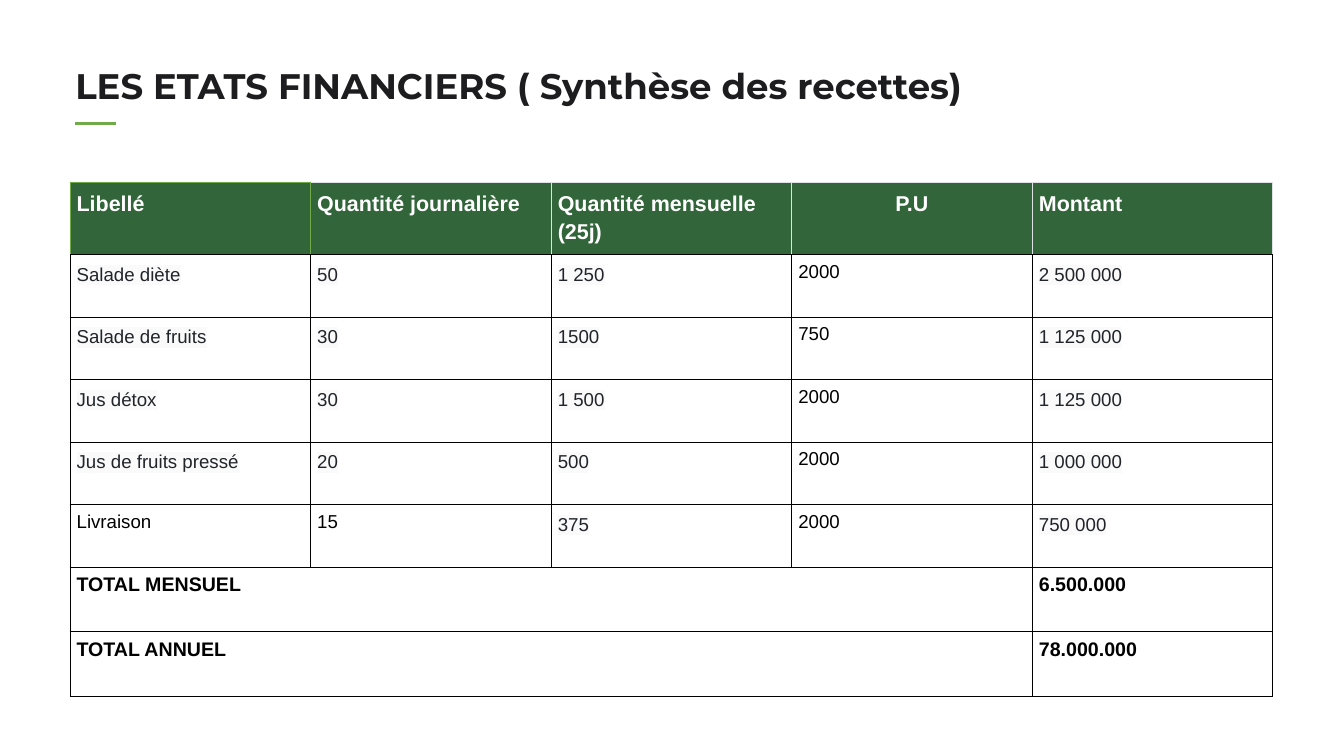
from lxml.etree import SubElement
from pptx import Presentation
from pptx.dml.color import RGBColor
from pptx.enum.shapes import MSO_CONNECTOR
from pptx.enum.text import MSO_ANCHOR, MSO_AUTO_SIZE, PP_ALIGN
from pptx.oxml.ns import qn
from pptx.util import Inches, Pt

WHITE = RGBColor(0xFF, 0xFF, 0xFF)
BLACK = RGBColor(0x00, 0x00, 0x00)
INK = RGBColor(0x1D, 0x1D, 0x1F)
GREY_TEXT = RGBColor(0x21, 0x25, 0x29)
GREEN = RGBColor(0x71, 0xAA, 0x48)
DARK_GREEN = RGBColor(0x32, 0x65, 0x3A)
PALE_GREY = RGBColor(0xDE, 0xE2, 0xE6)
OFF_WHITE = RGBColor(0xFA, 0xFA, 0xFA)

HEADERS = ["Libellé", "Quantité journalière", "Quantité mensuelle (25j)", "P.U", "Montant"]
PRODUCTS = [
    ["Salade diète", "50", "1 250", "2000", "2 500 000"],
    ["Salade de fruits", "30", "1500", "750", "1 125 000"],
    ["Jus détox", "30", "1 500", "2000", "1 125 000"],
    ["Jus de fruits pressé", "20", "500", "2000", "1 000 000"],
    ["Livraison", "15", "375", "2000", "750 000"],
]
TOTALS = [("TOTAL MENSUEL", "6.500.000"), ("TOTAL ANNUEL", "78.000.000")]
UNIT_PRICE = HEADERS.index("P.U")
LAST = len(HEADERS) - 1
ROW_HEIGHTS = [0.99] + [0.93] * len(PRODUCTS) + [0.96] * len(TOTALS)
COLUMN_WIDTH = 3.58


def add_title(slide, text):
    sp = slide.shapes.title
    sp.left, sp.top, sp.width, sp.height = map(Inches, (1.12, 0.89, 18.29, 0.64))
    tf = sp.text_frame
    tf.margin_left = tf.margin_top = tf.margin_right = tf.margin_bottom = 0
    tf.vertical_anchor = MSO_ANCHOR.TOP
    tf.auto_size = MSO_AUTO_SIZE.SHAPE_TO_FIT_TEXT
    tf.word_wrap = True
    tf.text = text
    p = tf.paragraphs[0]
    p.alignment = PP_ALIGN.LEFT
    p.line_spacing = 1.1
    p.font.name = "Montserrat"
    p.font.size = Pt(38)
    p.font.bold = True
    p.font.color.rgb = INK


def add_title_rule(slide):
    line = slide.shapes.add_connector(
        MSO_CONNECTOR.STRAIGHT, Inches(1.12), Inches(1.84), Inches(1.73), Inches(1.84))
    line.line.color.rgb = GREEN
    line.line.width = Pt(3.75)
    SubElement(line._element.spPr, qn("a:effectLst"))


def set_borders(cell, left=BLACK, right=BLACK, top=BLACK, bottom=BLACK):
    tc_pr = cell._tc.get_or_add_tcPr()
    for side, color in zip("LRTB", (left, right, top, bottom)):
        ln = SubElement(tc_pr, qn(f"a:ln{side}"), w=str(Pt(0.75)))
        fill = SubElement(ln, qn("a:solidFill"))
        SubElement(fill, qn("a:srgbClr"), val=str(color))


def highlight(run, color):
    r_pr = run.font._element if hasattr(run.font, "_element") else run._r.get_or_add_rPr()
    mark = SubElement(r_pr, qn("a:highlight"))
    SubElement(mark, qn("a:srgbClr"), val=str(color))
    r_pr.find(qn("a:solidFill")).addnext(mark)


def write_cell(cell, text, size, color, bold=False, mark=None):
    """Write the text; marked text is highlighted and has looser lines."""
    cell.margin_left = cell.margin_right = Inches(0.1)
    cell.margin_top = cell.margin_bottom = Inches(0.1)
    p = cell.text_frame.paragraphs[0]
    p.line_spacing = 1.15 if mark else 1.0
    r = p.add_run()
    r.text = text
    r.font.name = "Arial"
    r.font.size = Pt(size)
    r.font.bold = bold
    r.font.color.rgb = color
    if mark:
        highlight(r, mark)


def fill_header(table):
    for col, text in enumerate(HEADERS):
        cell = table.cell(0, col)
        write_cell(cell, text, 23, WHITE, bold=True, mark=DARK_GREEN)
        first = GREEN if col == 0 else PALE_GREY
        set_borders(cell, left=GREEN if col < 2 else PALE_GREY, right=first, top=first)
        cell.fill.solid()
        cell.fill.fore_color.rgb = DARK_GREEN
    table.cell(0, UNIT_PRICE).text_frame.paragraphs[0].alignment = PP_ALIGN.CENTER


def fill_body(table):
    for row in range(1, len(ROW_HEIGHTS)):
        for col in range(len(HEADERS)):
            set_borders(table.cell(row, col))
            table.cell(row, col).fill.background()

    for row, values in enumerate(PRODUCTS, 1):
        for col, text in enumerate(values):
            plain = col == UNIT_PRICE or (values[0] == "Livraison" and col < 2)
            write_cell(table.cell(row, col), text, 20, BLACK if plain else GREY_TEXT,
                       mark=None if plain else OFF_WHITE)

    for row, (label, amount) in enumerate(TOTALS, len(PRODUCTS) + 1):
        table.cell(row, 0).merge(table.cell(row, LAST - 1))
        write_cell(table.cell(row, 0), label, 21, BLACK, bold=True)
        write_cell(table.cell(row, LAST), amount, 21, BLACK, bold=True)


def add_revenue_table(slide):
    table = slide.shapes.add_table(
        len(ROW_HEIGHTS), len(HEADERS), Inches(1.04), Inches(2.71),
        Inches(COLUMN_WIDTH * len(HEADERS)), Inches(sum(ROW_HEIGHTS))).table
    table.first_row = table.horz_banding = False
    for column in table.columns:
        column.width = Inches(COLUMN_WIDTH)
    for row, height in zip(table.rows, ROW_HEIGHTS):
        row.height = Inches(height)
    fill_header(table)
    fill_body(table)


def main():
    prs = Presentation()
    prs.slide_width, prs.slide_height = Inches(20), Inches(11.25)
    slide = prs.slides.add_slide(prs.slide_layouts[5])
    add_title_rule(slide)
    add_title(slide, "LES ETATS FINANCIERS ( Synthèse des recettes)")
    add_revenue_table(slide)
    prs.save("out.pptx")


if __name__ == "__main__":
    main()
